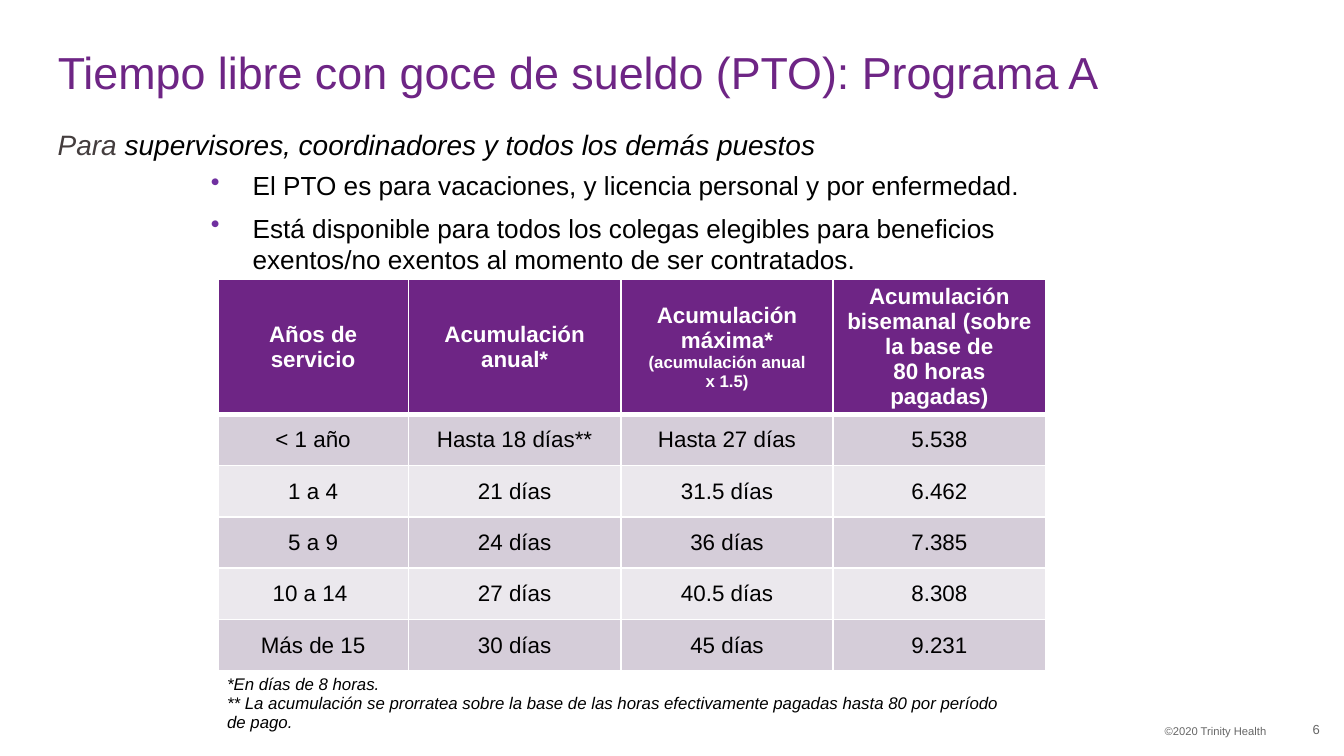
import pptx
import pptx.util
import pptx.dml.color
import pptx.enum.text
import pptx.oxml.ns
import lxml.etree

Pt = pptx.util.Pt
Align = pptx.enum.text.PP_ALIGN
Anchor = pptx.enum.text.MSO_ANCHOR
COLS, ROWS = 100, 56.25

HEAD = [
    ["Años de servicio"],
    ["Acumulación anual*"],
    ["Acumulación máxima*", "(acumulación anual\nx 1.5)"],
    ["Acumulación bisemanal (sobre la base de\n80 horas pagadas)"],
]
BODY = [
    ["< 1 año", "Hasta 18 días**", "Hasta 27 días", "5.538"],
    ["1 a 4", "21 días", "31.5 días", "6.462"],
    ["5 a 9", "24 días", "36 días", "7.385"],
    ["10 a 14 ", "27 días", "40.5 días", "8.308"],
    ["Más de 15", "30 días", "45 días", "9.231"],
]
NOTES = [
    "*En días de 8 horas.",
    "** La acumulación se prorratea sobre la base de las horas "
    "efectivamente pagadas hasta 80 por período\nde pago.",
]
POINTS = [
    "El PTO es para vacaciones, y licencia personal y por enfermedad.",
    "Está disponible para todos los colegas elegibles para beneficios "
    "exentos/no exentos al momento de ser contratados.",
]


class Deck:
    font = "Arial"
    hues = {
        "plum": "6E2585", "dot": "7030A0", "dark": "D5CDD9",
        "pale": "EBE8ED", "white": "FFFFFF", "black": "000000",
        "gray": "666666", "ink": "443D3E",
    }

    def __init__(self):
        self.file = pptx.Presentation()
        self.file.slide_width = pptx.util.Inches(10)
        self.file.slide_height = pptx.util.Inches(5.625)
        self.slide = self.file.slides.add_slide(self.file.slide_layouts[5])

    def hue(self, name):
        return pptx.dml.color.RGBColor.from_string(self.hues[name])

    def col(self, count):
        return round(self.file.slide_width * count / COLS)

    def row(self, count):
        return round(self.file.slide_height * count / ROWS)

    def area(self, x, y, w, h):
        return self.col(x), self.row(y), self.col(w), self.row(h)

    def frame(self, shape, inset, anchor):
        frame = shape.text_frame
        frame.word_wrap = True
        frame.auto_size = pptx.enum.text.MSO_AUTO_SIZE.NONE
        frame.vertical_anchor = anchor
        left, top, right, bottom = inset
        frame.margin_left, frame.margin_right = self.col(left), self.col(right)
        frame.margin_top, frame.margin_bottom = self.row(top), self.row(bottom)
        return frame

    def run(self, para, text, size, color, bold=False, italic=False):
        for index, line in enumerate(text.split("\n")):
            if index:
                para.add_line_break()
            run = para.add_run()
            run.text = line
            font = run.font
            font.name, font.size = self.font, Pt(size)
            font.bold, font.italic = bold, italic
            font.color.rgb = self.hue(color)

    def next(self, frame, index):
        return frame.add_paragraph() if index else frame.paragraphs[0]

    def title(self, area, text):
        shape = self.slide.shapes.title
        shape.left, shape.top, shape.width, shape.height = self.area(*area)
        para = self.frame(shape, (0, 0, 0, 0), Anchor.MIDDLE).paragraphs[0]
        para.alignment, para.line_spacing = Align.LEFT, 0.9
        self.run(para, text, 24, "plum")

    def box(self, area, inset=(1, 0.5, 1, 0.5), anchor=Anchor.TOP):
        shape = self.slide.shapes.add_textbox(*self.area(*area))
        return self.frame(shape, inset, anchor)

    def lead(self, area, parts):
        para = self.box(area, (0, 0.5, 1, 0.5)).paragraphs[0]
        para.line_spacing, para.space_after = Pt(15.8), Pt(4.5)
        for text, color in parts:
            self.run(para, text, 15, color, italic=True)

    def list(self, area, items):
        frame = self.box(area, (0, 1, 1, 0.5))
        for index, text in enumerate(items):
            para = self.next(frame, index)
            props = para._p.get_or_add_pPr()
            props.set("marL", str(self.col(3.1)))
            props.set("indent", str(-self.col(3.1)))
            tint = lxml.etree.SubElement(props, pptx.oxml.ns.qn("a:buClr"))
            lxml.etree.SubElement(
                tint, pptx.oxml.ns.qn("a:srgbClr"), val=self.hues["dot"])
            lxml.etree.SubElement(
                props, pptx.oxml.ns.qn("a:buChar"), char="•")
            para.space_after = Pt(6)
            self.run(para, text, 14, "black")

    def foot(self, area, text, size, **style):
        para = self.box(area, **style).paragraphs[0]
        para.alignment = Align.RIGHT
        self.run(para, text, size, "gray")

    def edge(self, cell, base):
        props = cell._tc.get_or_add_tcPr()
        for side, width in zip("LRTB", (1, 1, 1, base)):
            line = lxml.etree.SubElement(
                props, pptx.oxml.ns.qn("a:ln" + side), w=str(Pt(width)))
            fill = lxml.etree.SubElement(line, pptx.oxml.ns.qn("a:solidFill"))
            lxml.etree.SubElement(
                fill, pptx.oxml.ns.qn("a:srgbClr"), val=self.hues["white"])

    def cell(self, cell, lines, fill=None, base=1, align=Align.CENTER, **style):
        self.edge(cell, base)
        if fill:
            cell.fill.solid()
            cell.fill.fore_color.rgb = self.hue(fill)
        else:
            cell.fill.background()
        cell.vertical_anchor = Anchor.MIDDLE
        cell.margin_left = cell.margin_right = self.col(0.7)
        cell.margin_top = cell.margin_bottom = self.row(0.35)
        for index, (text, size) in enumerate(lines):
            para = self.next(cell.text_frame, index)
            para.alignment = align
            self.run(para, text, size, **style)

    def table(self, x, y, widths, heights):
        area = self.area(x, y, sum(widths), sum(heights))
        table = self.slide.shapes.add_table(
            len(heights), len(widths), *area).table
        table.horz_banding = False
        for column, width in zip(table.columns, widths):
            column.width = self.col(width)
        for line, height in zip(table.rows, heights):
            line.height = self.row(height)
        for c, texts in enumerate(HEAD):
            lines = list(zip(texts, (12, 9)))
            self.cell(table.cell(0, c), lines, "plum", 3,
                      color="white", bold=True)
        for r, texts in enumerate(BODY, 1):
            for c, text in enumerate(texts):
                self.cell(table.cell(r, c), [(text, 12)],
                          "dark" if r % 2 else "pale", 3 if r == 0 else 1,
                          color="black")
        last = len(heights) - 1
        note = table.cell(last, 0)
        note.merge(table.cell(last, len(widths) - 1))
        self.cell(note, [(text, 9) for text in NOTES], align=Align.LEFT,
                  color="black", italic=True)


def main():
    deck = Deck()
    deck.title((4.3, 2.8, 90, 5.5),
               "Tiempo libre con goce de sueldo (PTO): Programa A")
    deck.lead((4.3, 9.3, 58, 3.3), [
        ("Para ", "ink"),
        ("supervisores, coordinadores y todos los demás puestos", "black"),
    ])
    deck.list((15.7, 11.6, 67.6, 11.1), POINTS)
    deck.table(16.2, 20.8, [14.2] + [15.8] * 3, [9.7] + [3.82] * 5 + [4.6])
    deck.foot((53.3, 53.4, 41.9, 2), "©2020 Trinity Health", 6)
    deck.foot((93.8, 52.8, 4.4, 3), "6", 7,
              inset=(1, 0.5, 0, 0.5), anchor=Anchor.MIDDLE)
    deck.file.save("out.pptx")


if __name__ == "__main__":
    main()
